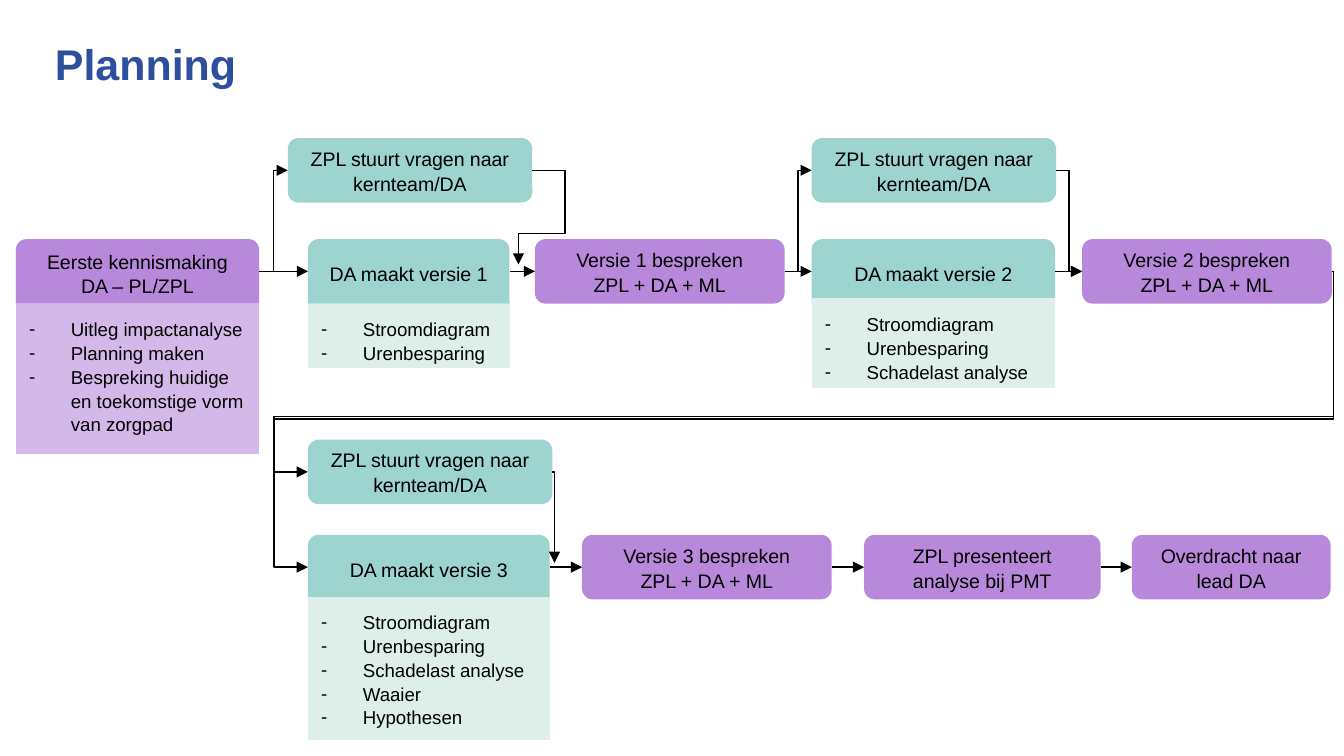
import pptx
import pptx.util
import pptx.dml.color
import pptx.enum.shapes
import pptx.enum.text
import pptx.oxml
import pptx.oxml.ns
from pptx.util import Cm

SHAPES = pptx.enum.shapes.MSO_SHAPE
ANCHORS = pptx.enum.text.MSO_ANCHOR
ALIGNMENTS = pptx.enum.text.PP_ALIGN
NAMESPACE = pptx.oxml.ns.nsdecls("a")

PURPLE, LILAC = "B889DB", "D5B8EA"
TEAL, MINT = "9DD4CF", "DDEFE8"
BLACK, BLUE = "000000", "2D4F9E"

STEP_HEIGHT = 1.22
QUESTION_TOP, FIRST_TOP = 2.61, 4.52
LAST_QUESTION_TOP, LAST_TOP = 8.31, 10.11
QUESTION = "ZPL stuurt vragen naar kernteam/DA"


def color(value):
    return pptx.dml.color.RGBColor.from_string(value)


def style_para(para, size, hue=BLACK, bold=False):
    for span in para.runs:
        span.font.name = "Arial"
        span.font.size = pptx.util.Pt(size)
        span.font.bold = bold
        span.font.color.rgb = color(hue)


def add_title(page, text):
    box = page.shapes.add_textbox(Cm(1.04), Cm(0.72), Cm(23.32), Cm(0.9))
    frame = box.text_frame
    frame.word_wrap = True
    frame.margin_left = frame.margin_right = frame.margin_top = frame.margin_bottom = 0
    frame.text = text
    style_para(frame.paragraphs[0], 23, BLUE, True)


def add_box(shapes, kind, left, top, width, height, fill, lines, size, alignment, anchor):
    box = shapes.add_shape(kind, Cm(left), Cm(top), Cm(width), Cm(height))
    box.shadow.inherit = False
    box.fill.solid()
    box.fill.fore_color.rgb = color(fill)
    box.line.fill.background()
    frame = box.text_frame
    frame.word_wrap = True
    frame.vertical_anchor = anchor
    frame.margin_left = frame.margin_right = Cm(0.25)
    frame.margin_top = frame.margin_bottom = Cm(0.25)
    frame.text = "\n".join(lines)
    for para in frame.paragraphs:
        para.alignment = alignment
        para.line_spacing = 1.06
        style_para(para, size)
    return box


def add_step(shapes, left, top, width, fill, *lines, kind=SHAPES.ROUNDED_RECTANGLE):
    return add_box(shapes, kind, left, top, width, STEP_HEIGHT, fill, lines,
                   10.5, ALIGNMENTS.CENTER, ANCHORS.MIDDLE)


def add_dashes(para):
    properties = para._p.get_or_add_pPr()
    properties.set("marL", str(Cm(0.79)))
    properties.set("indent", str(-Cm(0.79)))
    for markup in (f'<a:buClr {NAMESPACE}><a:srgbClr val="{BLACK}"/></a:buClr>',
                   f'<a:buFont {NAMESPACE} typeface="Arial"/>',
                   f'<a:buChar {NAMESPACE} char="-"/>'):
        properties.append(pptx.oxml.parse_xml(markup))


def add_card(page, left, top, width, fills, heading, body_top, body_height, items):
    shapes = page.shapes.add_group_shape().shapes
    header = add_step(shapes, left, top, width, fills[0], *heading,
                      kind=SHAPES.ROUND_2_SAME_RECTANGLE)
    body = add_box(shapes, SHAPES.FLOWCHART_PROCESS, left, body_top, width, body_height,
                   fills[1], items, 10, ALIGNMENTS.LEFT, ANCHORS.TOP)
    for para in body.text_frame.paragraphs:
        add_dashes(para)
    return header


def left_side(box):
    return box.left, box.top + box.height // 2


def right_side(box):
    return box.left + box.width, box.top + box.height // 2


def add_arrow(page, start, end, preset="line", adjustments=()):
    kinds = pptx.enum.shapes.MSO_CONNECTOR
    kind = kinds.STRAIGHT if preset == "line" else kinds.ELBOW
    arrow = page.shapes.add_connector(kind, *start, *end)
    arrow.line.width = pptx.util.Pt(0.75)
    arrow.line.color.rgb = color(BLACK)
    arrow.line._get_or_add_ln().append(
        pptx.oxml.parse_xml(f'<a:tailEnd {NAMESPACE} type="triangle"/>'))
    properties = arrow._element.spPr
    properties.append(pptx.oxml.parse_xml(f"<a:effectLst {NAMESPACE}/>"))
    geometry = properties.find(pptx.oxml.ns.qn("a:prstGeom"))
    geometry.set("prst", preset)
    guides = geometry.find(pptx.oxml.ns.qn("a:avLst"))
    for number, share in enumerate(adjustments, 1):
        guides.append(pptx.oxml.parse_xml(
            f'<a:gd {NAMESPACE} name="adj{number}" fmla="val {share}"/>'))


def main():
    deck = pptx.Presentation()
    deck.slide_width, deck.slide_height = Cm(25.4), Cm(14.29)
    page = deck.slides.add_slide(deck.slide_layouts[6])
    add_title(page, "Planning")

    results = ["Stroomdiagram", "Urenbesparing", "Schadelast analyse", "Waaier", "Hypothesen"]
    intake = add_card(page, 0.3, FIRST_TOP, 4.6, (PURPLE, LILAC),
                      ["Eerste kennismaking", "DA – PL/ZPL"], 5.74, 2.84,
                      ["Uitleg impactanalyse", "Planning maken",
                       "Bespreking huidige en toekomstige vorm van zorgpad"])
    drafts = [
        add_card(page, left, top, width, (TEAL, MINT), [f"DA maakt versie {number}"],
                 body_top, body_height, results[:count])
        for number, (left, top, width, body_top, body_height, count) in enumerate((
            (5.82, FIRST_TOP, 3.81, 5.74, 1.22, 2),
            (15.34, FIRST_TOP, 4.6, 5.64, 1.7, 3),
            (5.82, LAST_TOP, 4.57, 11.28, 2.7, 5)), 1)]
    questions = [
        add_step(page.shapes, left, top, 4.62, TEAL, QUESTION)
        for left, top in ((5.44, QUESTION_TOP), (15.34, QUESTION_TOP),
                          (5.82, LAST_QUESTION_TOP))]
    reviews = [
        add_step(page.shapes, left, top, 4.72, PURPLE,
                 f"Versie {number} bespreken", "ZPL + DA + ML")
        for number, (left, top) in enumerate((
            (10.11, FIRST_TOP), (20.45, FIRST_TOP), (11, LAST_TOP)), 1)]
    presentation = add_step(page.shapes, 16.33, LAST_TOP, 4.47, PURPLE,
                            "ZPL presenteert analyse bij PMT")
    handover = add_step(page.shapes, 21.39, LAST_TOP, 3.76, PURPLE,
                        "Overdracht naar lead DA")

    first_row = [intake, drafts[0], reviews[0], drafts[1], reviews[1]]
    last_row = [drafts[2], reviews[2], presentation, handover]
    for row in (first_row, last_row):
        for source, target in zip(row, row[1:]):
            add_arrow(page, right_side(source), left_side(target))

    for source, target in ((intake, questions[0]), (reviews[0], questions[1]),
                           (questions[1], reviews[1])):
        add_arrow(page, right_side(source), left_side(target), "bentConnector3", (50000,))
    add_arrow(page, right_side(questions[0]), (Cm(9.8), Cm(5)),
              "bentConnector4", (-238800, 66900))
    for target, middle in ((drafts[2], 50000), (questions[2], 72300)):
        add_arrow(page, right_side(reviews[1]), left_side(target),
                  "bentConnector5", (-200, middle, 103300))
    add_arrow(page, right_side(questions[2]), (Cm(10.48), Cm(10.64)), "bentConnector2")

    deck.save("out.pptx")


if __name__ == "__main__":
    main()
